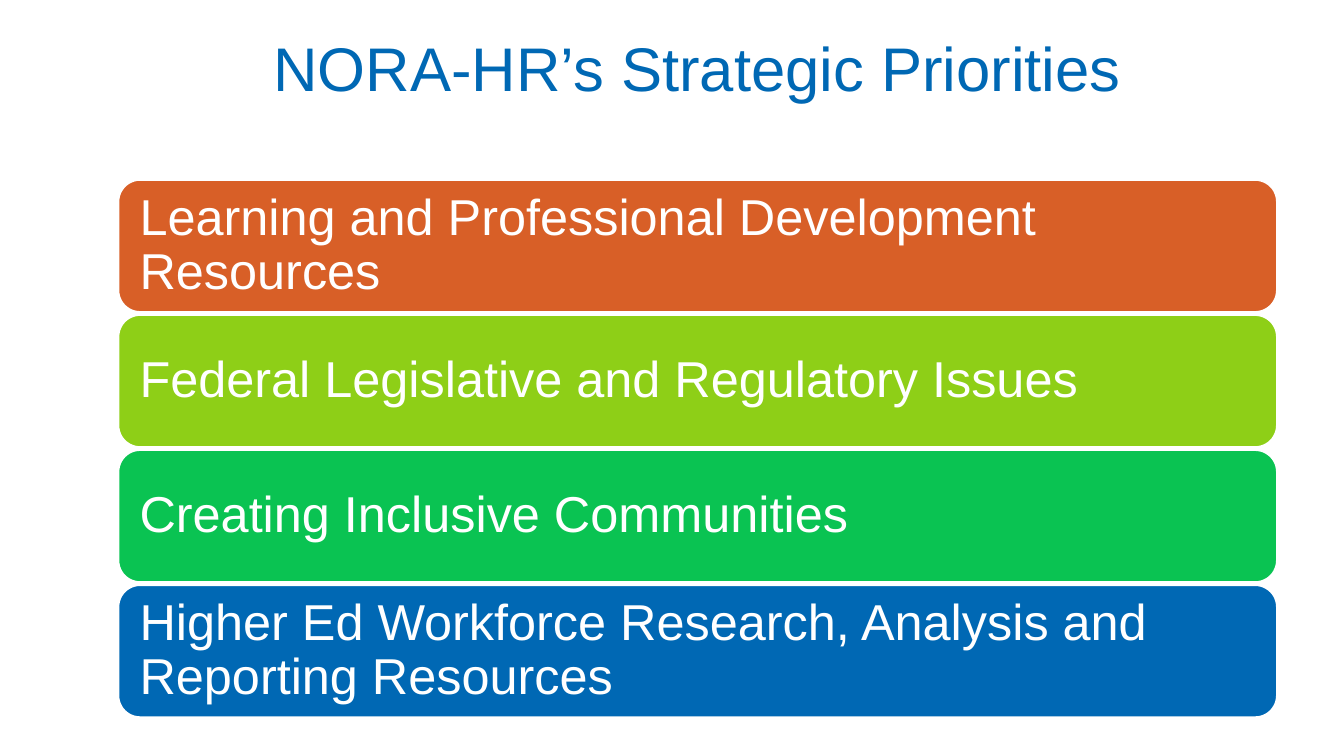
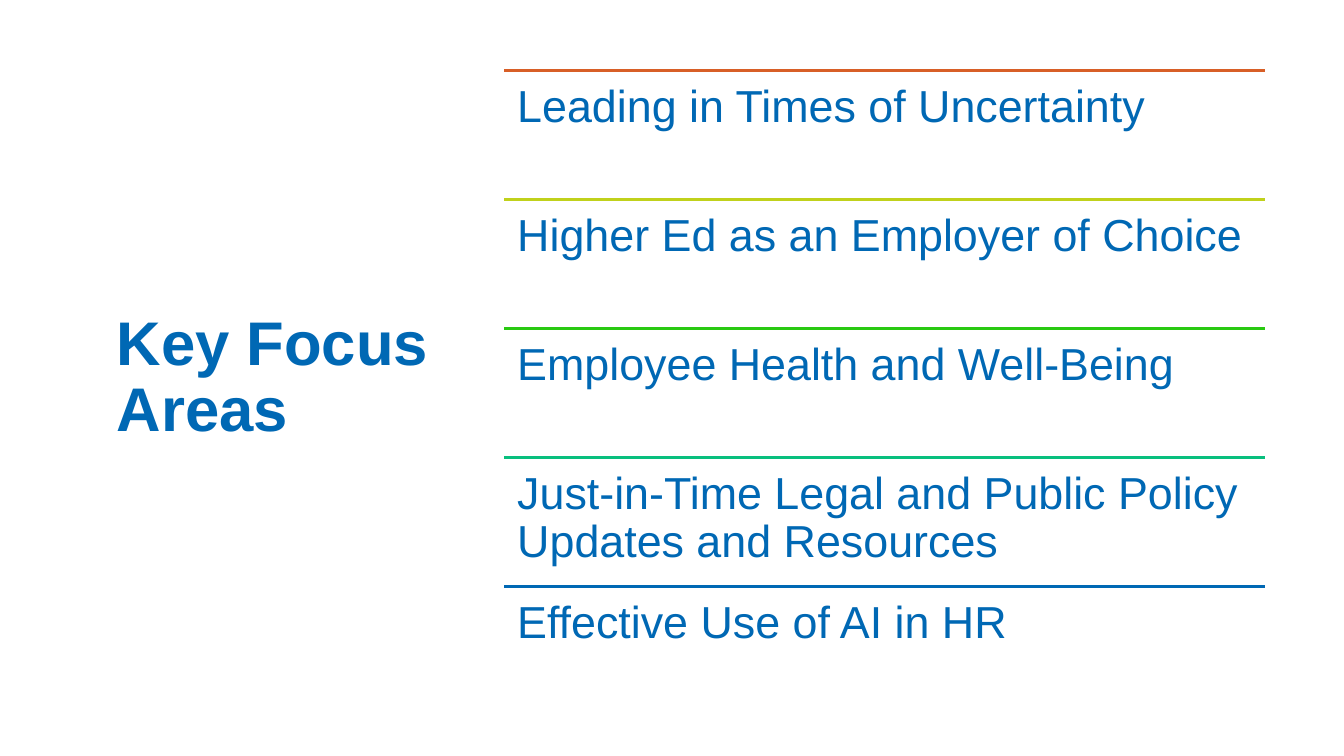
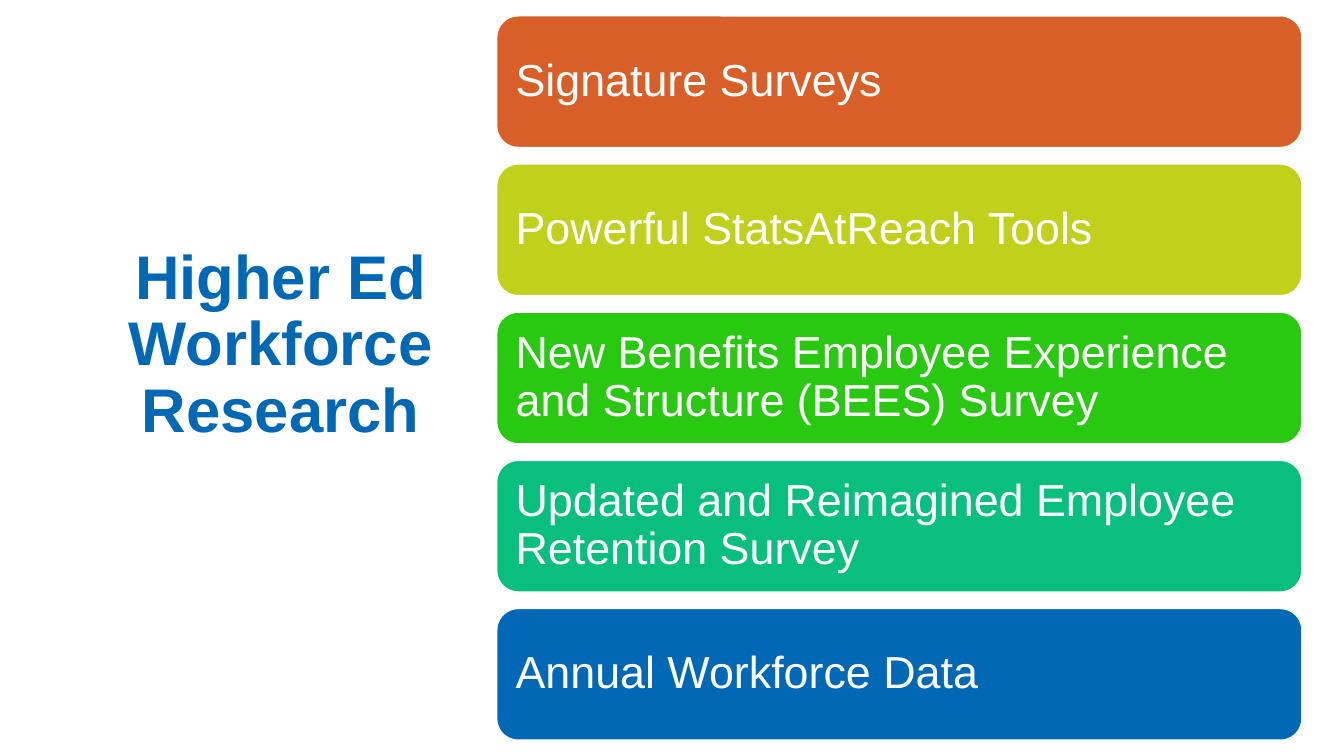
import dataclasses

import lxml.etree
import pptx
import pptx.dml.color
import pptx.enum.shapes
import pptx.enum.text
import pptx.oxml.ns
import pptx.util

ANCHOR = pptx.enum.text.MSO_ANCHOR
ALIGN = pptx.enum.text.PP_ALIGN
EMU_PER_PX = 9144


def px(length):
    return pptx.util.Emu(length * EMU_PER_PX)


@dataclasses.dataclass(frozen=True)
class Theme:
    font: str = "Arial"
    white: str = "FFFFFF"
    blue: str = "0068B4"
    orange: str = "D85F27"
    lime: str = "C0D11B"
    leaf: str = "8ECF17"
    green: str = "29C911"
    emerald: str = "0AC352"
    teal: str = "08BF7E"
    title_size: int = 44
    large_size: int = 36
    body_size: int = 32
    line_width: int = 2
    line_spacing: float = 0.9


def color(value):
    return pptx.dml.color.RGBColor.from_string(value)


def apply(target, values):
    for name, value in values.items():
        setattr(target, name, value)


class SlideBuilder:
    """Holds the deck, its theme and the slide being filled."""

    def __init__(self, theme):
        self.theme = theme
        self.deck = pptx.Presentation()
        apply(self.deck, {"slide_width": px(1333), "slide_height": px(750)})
        self.page = None

    def new_page(self):
        self.page = self.deck.slides.add_slide(self.deck.slide_layouts[6])

    def fill_text(self, shape, text, size, text_color, anchor=ANCHOR.MIDDLE,
                  align=ALIGN.LEFT, bold=False, inset=(10, 5)):
        """Put one paragraph in a shape; inset is (sides, top and bottom)."""
        across, down = map(px, inset)
        frame = shape.text_frame
        apply(frame, {
            "word_wrap": True, "vertical_anchor": anchor,
            "margin_left": across, "margin_right": across,
            "margin_top": down, "margin_bottom": down,
        })
        para = frame.paragraphs[0]
        apply(para, {"alignment": align, "line_spacing": self.theme.line_spacing})
        span = para.add_run()
        span.text = text
        apply(span.font, {"name": self.theme.font, "size": pptx.util.Pt(size), "bold": bold})
        span.font.color.rgb = color(text_color)

    def text(self, area, text, size, **style):
        box = self.page.shapes.add_textbox(*map(px, area))
        self.fill_text(box, text, size, self.theme.blue, **style)

    def title(self, area, text, **style):
        self.text(area, text, self.theme.title_size, **style)

    def set_line(self, line, line_color):
        line.color.rgb = color(line_color)
        line.width = pptx.util.Pt(self.theme.line_width)

    def bar(self, area, text, fill, size, inset):
        box = self.page.shapes.add_shape(
            pptx.enum.shapes.MSO_SHAPE.ROUNDED_RECTANGLE, *map(px, area))
        box.shadow.inherit = False
        box.fill.solid()
        box.fill.fore_color.rgb = color(fill)
        self.set_line(box.line, self.theme.white)
        self.fill_text(box, text, size, self.theme.white, inset=(inset, inset))

    def bars(self, area, pitch, items, size, inset):
        """Stack bars down from the first one's area, one per (text, fill)."""
        left, top, width, height = area
        for row, (text, fill) in enumerate(items):
            self.bar((left, top + row * pitch, width, height), text, fill, size, inset)

    def rule(self, left, top, width, line_color):
        rule = self.page.shapes.add_connector(
            pptx.enum.shapes.MSO_CONNECTOR.STRAIGHT,
            px(left), px(top), px(left + width), px(top))
        self.set_line(rule.line, line_color)
        lxml.etree.SubElement(rule.element.spPr, pptx.oxml.ns.qn("a:effectLst"))

    def ruled_list(self, area, items):
        """Stack texts down from the first one's area, each under a coloured rule."""
        left, top, width, pitch = area
        for row, (text, line_color) in enumerate(items):
            row_top = top + row * pitch
            self.rule(left, row_top, width, line_color)
            self.text((left, row_top, width, pitch), text, self.theme.body_size,
                      anchor=ANCHOR.TOP, inset=(13, 13))


def main():
    theme = Theme()
    builder = SlideBuilder(theme)
    five_colors = (theme.orange, theme.lime, theme.green, theme.teal, theme.blue)

    builder.new_page()
    builder.title((117, 33, 1150, 145), "NORA-HR’s Strategic Priorities",
                  anchor=ANCHOR.TOP, align=ALIGN.CENTER)
    priorities = (
        ("Learning and Professional Development Resources", theme.orange),
        ("Federal Legislative and Regulatory Issues", theme.leaf),
        ("Creating Inclusive Communities", theme.emerald),
        ("Higher Ed Workforce Research, Analysis and Reporting Resources", theme.blue),
    )
    builder.bars((117, 178, 1150, 132), 134, priorities, theme.large_size, inset=15)

    builder.new_page()
    builder.title((106, 70, 374, 611), "Key Focus Areas", bold=True)
    focus_areas = (
        "Leading in Times of Uncertainty",
        "Higher Ed as an Employer of Choice",
        "Employee Health and Well-Being",
        "Just-in-Time Legal and Public Policy Updates and Resources",
        "Effective Use of AI in HR",
    )
    builder.ruled_list((500, 70, 755, 128), zip(focus_areas, five_colors))

    builder.new_page()
    builder.title((42, 100, 473, 486), "Higher Ed Workforce Research",
                  align=ALIGN.CENTER, bold=True)
    research = (
        "Signature Surveys",
        "Powerful StatsAtReach Tools",
        "New Benefits Employee Experience and Structure (BEES) Survey",
        "Updated and Reimagined Employee Retention Survey",
        "Annual Workforce Data",
    )
    builder.bars((492, 15, 800, 132), 147, zip(research, five_colors),
                 theme.body_size, inset=13)

    builder.deck.save("out.pptx")


if __name__ == "__main__":
    main()
